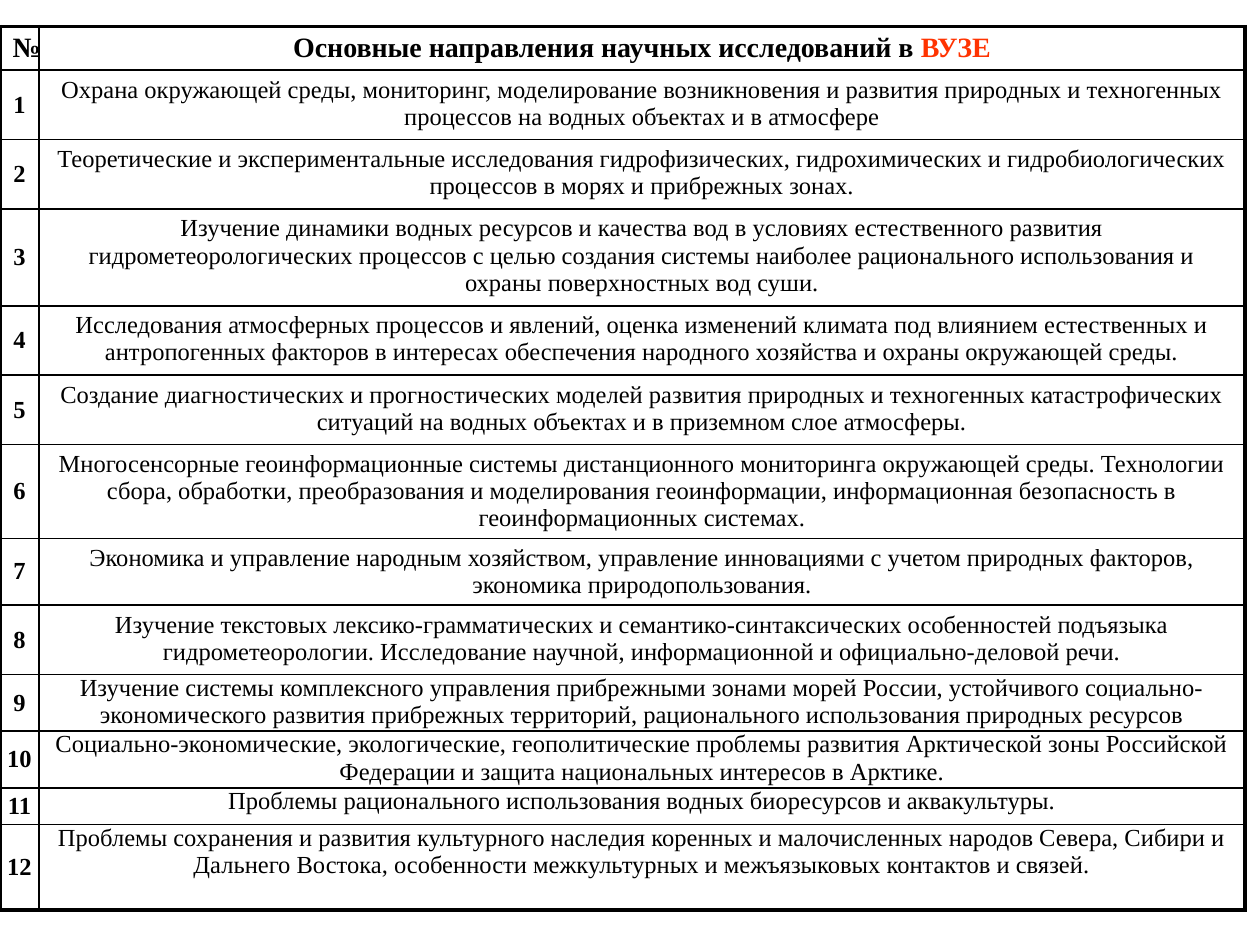
from dataclasses import dataclass

from lxml.etree import SubElement
from pptx import Presentation
from pptx.dml.color import RGBColor
from pptx.enum.text import MSO_ANCHOR, PP_ALIGN
from pptx.oxml.ns import qn
from pptx.util import Inches, Pt

FONT = "Times New Roman"
BLACK, RED = "000000", "FF3300"
THIN, THICK = 1, 2.25
COLS = (0.31, 9.57)


@dataclass
class Row:
    height: float
    text: str
    padded: bool = True


HEADER = Row(0.31, "Основные направления научных исследований в ")
TOPICS = [
    Row(0.55, "Охрана окружающей среды, мониторинг, моделирование возникновения и развития "
              "природных и техногенных процессов на водных объектах и в атмосфере"),
    Row(0.55, "Теоретические и экспериментальные исследования гидрофизических, гидрохимических "
              "и гидробиологических процессов в морях и прибрежных зонах."),
    Row(0.77, "Изучение динамики водных ресурсов и качества вод в условиях естественного развития "
              "гидрометеорологических процессов с целью создания системы наиболее рационального "
              "использования и охраны поверхностных вод суши."),
    Row(0.55, "Исследования атмосферных процессов и явлений, оценка изменений климата под влиянием "
              "естественных и антропогенных факторов в интересах обеспечения народного хозяйства "
              "и охраны окружающей среды."),
    Row(0.55, "Создание диагностических и прогностических моделей развития природных и техногенных "
              "катастрофических ситуаций на водных объектах и в приземном слое атмосферы."),
    Row(0.74, "Многосенсорные геоинформационные системы дистанционного мониторинга окружающей среды. "
              "Технологии сбора, обработки, преобразования и моделирования геоинформации, "
              "информационная безопасность в геоинформационных системах."),
    Row(0.49, "Экономика и управление народным хозяйством, управление инновациями с учетом "
              "природных факторов, экономика природопользования."),
    Row(0.55, "Изучение текстовых лексико-грамматических и семантико-синтаксических особенностей "
              "подъязыка гидрометеорологии. Исследование научной, информационной и "
              "официально-деловой речи."),
    Row(0.45, "Изучение системы комплексного управления прибрежными зонами морей России, устойчивого "
              "социально-экономического развития прибрежных территорий, рационального "
              "использования природных ресурсов", False),
    Row(0.45, "Социально-экономические, экологические, геополитические проблемы развития Арктической "
              "зоны Российской Федерации и защита национальных интересов в Арктике.", False),
    Row(0.29, "Проблемы рационального использования водных биоресурсов и аквакультуры.", False),
    Row(0.68, "Проблемы сохранения и развития культурного наследия коренных и малочисленных народов "
              "Севера, Сибири и Дальнего Востока, особенности межкультурных и межъязыковых "
              "контактов и связей.", False),
]
ROWS = [HEADER, *TOPICS]


def rgb(color: str) -> RGBColor:
    return RGBColor.from_string(color)


def style_run(r, size: float, bold: bool, color: str = BLACK) -> None:
    r.font.name, r.font.size, r.font.bold = FONT, Pt(size), bold
    r.font.color.rgb = rgb(color)


def write(cell, text: str, size: float, bold: bool, spaced: bool, middle: bool, padded: bool):
    cell.margin_left = cell.margin_right = Inches(0.1 if padded else 0)
    cell.margin_top = cell.margin_bottom = Inches(0.05 if padded else 0)
    cell.vertical_anchor = MSO_ANCHOR.MIDDLE if middle else MSO_ANCHOR.TOP
    p = cell.text_frame.paragraphs[0]
    p.text = text
    p.alignment = PP_ALIGN.CENTER
    if spaced:
        before = SubElement(p._p.get_or_add_pPr(), qn("a:spcBef"))
        SubElement(before, qn("a:spcPct"), val="20000")
    style_run(p.runs[0], size, bold)
    return p


def border(cell, row: int, col: int) -> None:
    widths = {
        "L": THICK if col == 0 else THIN,
        "R": THICK if col == len(COLS) - 1 else THIN,
        "T": THICK if row == 0 else THIN,
        "B": THICK if row == len(ROWS) - 1 else THIN,
    }
    tcPr = cell._tc.get_or_add_tcPr()
    for side, width in widths.items():
        ln = SubElement(tcPr, qn(f"a:ln{side}"), w=str(Pt(width)))
        SubElement(SubElement(ln, qn("a:solidFill")), qn("a:srgbClr"), val=BLACK)
    cell.fill.background()


def main() -> None:
    prs = Presentation()
    prs.slide_width, prs.slide_height = Inches(10), Inches(7.5)
    s = prs.slides.add_slide(prs.slide_layouts[6])
    height = sum(row.height for row in ROWS)
    tbl = s.shapes.add_table(len(ROWS), len(COLS), 0, Inches(0.21),
                             Inches(sum(COLS)), Inches(height)).table
    tbl.first_row = tbl.horz_banding = False
    for column, width in zip(tbl.columns, COLS):
        column.width = Inches(width)

    for i, row in enumerate(ROWS):
        tbl.rows[i].height = Inches(row.height)
        number, topic = tbl.cell(i, 0), tbl.cell(i, 1)
        head = i == 0
        size = 16 if head else 14
        write(number, "№" if head else str(i), size, True, True, not head, row.padded)
        p = write(topic, row.text, size, head, head, head, row.padded)
        if head:
            r = p.add_run()
            r.text = "ВУЗЕ"
            style_run(r, size, True, RED)
        for j, cell in enumerate((number, topic)):
            border(cell, i, j)

    prs.save("out.pptx")


if __name__ == "__main__":
    main()
